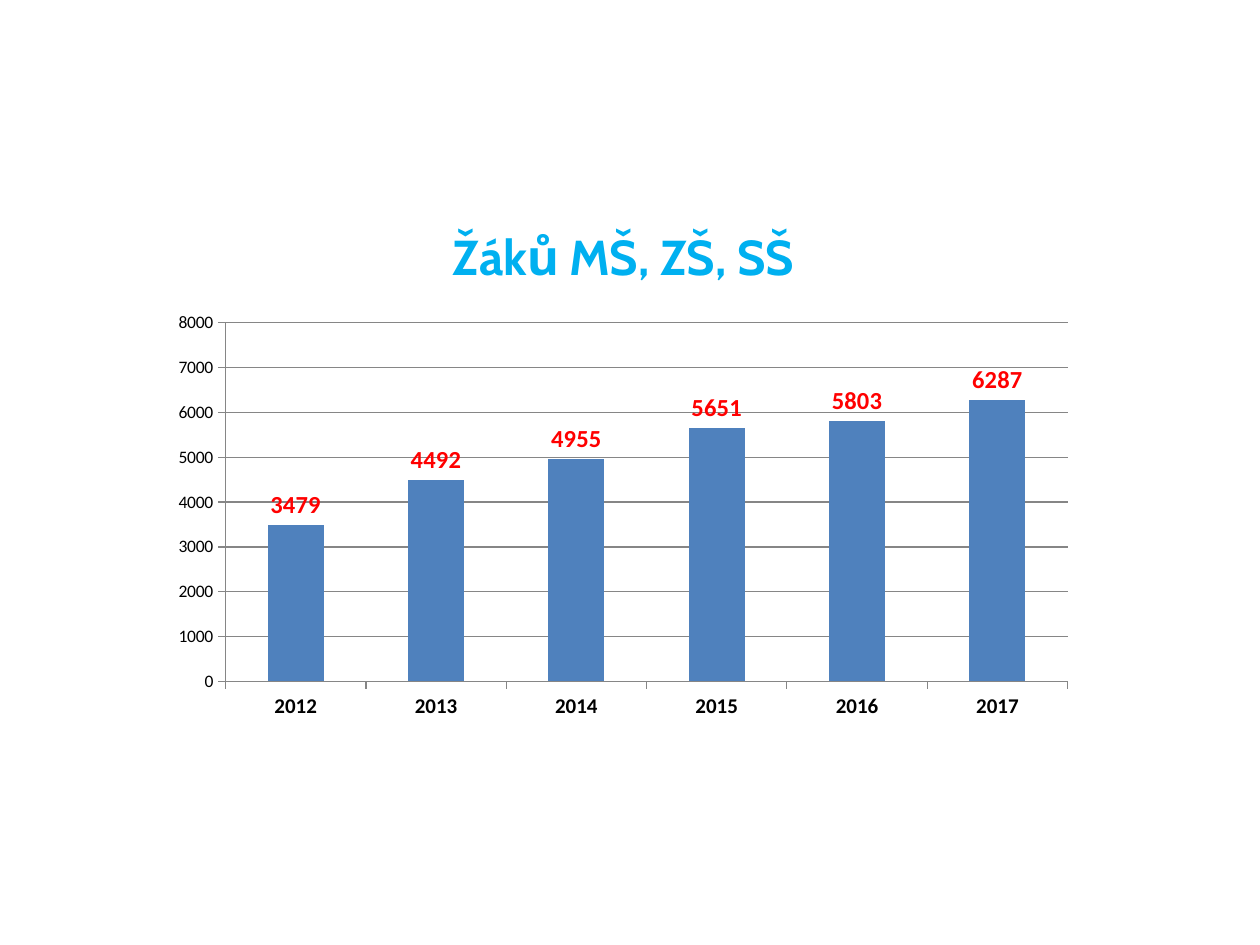
from pptx import Presentation
from pptx import util as u
from pptx.chart.data import CategoryChartData
from pptx.dml.color import RGBColor
from pptx.enum import chart as ch

TITLE = "Žáků MŠ, ZŠ, SŠ"
PUPILS = {"2012": 3479, "2013": 4492, "2014": 4955,
          "2015": 5651, "2016": 5803, "2017": 6287}
BAR, GRID, BLACK, RED, SKY = "4F81BD", "868686", "000000", "FF0000", "00B0F0"
FRAME = (1.27, 1.56, 7.35, 4.23)


def style(font, size, color=BLACK, bold=False, name="Calibri"):
    font.size, font.bold, font.name = u.Pt(size), bold, name
    font.color.rgb = RGBColor.from_string(color)


def rule(line):
    line.color.rgb = RGBColor.from_string(GRID)
    line.width = u.Pt(0.75)


def add_pupil_chart(slide):
    data = CategoryChartData(number_format="0")
    data.categories = list(PUPILS)
    data.add_series("Series 1", list(PUPILS.values()))
    chart = slide.shapes.add_chart(
        ch.XL_CHART_TYPE.COLUMN_CLUSTERED, *map(u.Inches, FRAME), data).chart
    style(chart.font, 10)
    chart.has_legend = False

    chart.has_title = True
    heading = chart.chart_title.text_frame.paragraphs[0].add_run()
    heading.text = TITLE
    style(heading.font, 28, SKY, True, "Cabin")
    chart.chart_title.include_in_layout = False

    years, counts = chart.category_axis, chart.value_axis
    for axis, size, bold in ((years, 12, True), (counts, 10, False)):
        style(axis.tick_labels.font, size, bold=bold)
        axis.major_tick_mark = ch.XL_TICK_MARK.OUTSIDE
        axis.minor_tick_mark = ch.XL_TICK_MARK.NONE
        rule(axis.format.line)
    counts.minimum_scale, counts.maximum_scale = 0, 8000
    counts.major_unit = 1000
    counts.tick_labels.number_format = "0"
    counts.tick_labels.number_format_is_linked = False
    counts.has_major_gridlines = True
    rule(counts.major_gridlines.format.line)

    plot = chart.plots[0]
    plot.gap_width = 150
    plot.vary_by_categories = False
    bars = plot.series[0]
    bars.format.fill.solid()
    bars.format.fill.fore_color.rgb = RGBColor.from_string(BAR)
    labels = bars.data_labels
    labels.show_value = True
    labels.number_format, labels.number_format_is_linked = "0", False
    labels.position = ch.XL_LABEL_POSITION.OUTSIDE_END
    style(labels.font, 14, RED, True)


def main():
    deck = Presentation()
    deck.slide_width, deck.slide_height = u.Inches(10), u.Inches(7.5)
    add_pupil_chart(deck.slides.add_slide(deck.slide_layouts[6]))
    deck.save("out.pptx")


if __name__ == "__main__":
    main()
